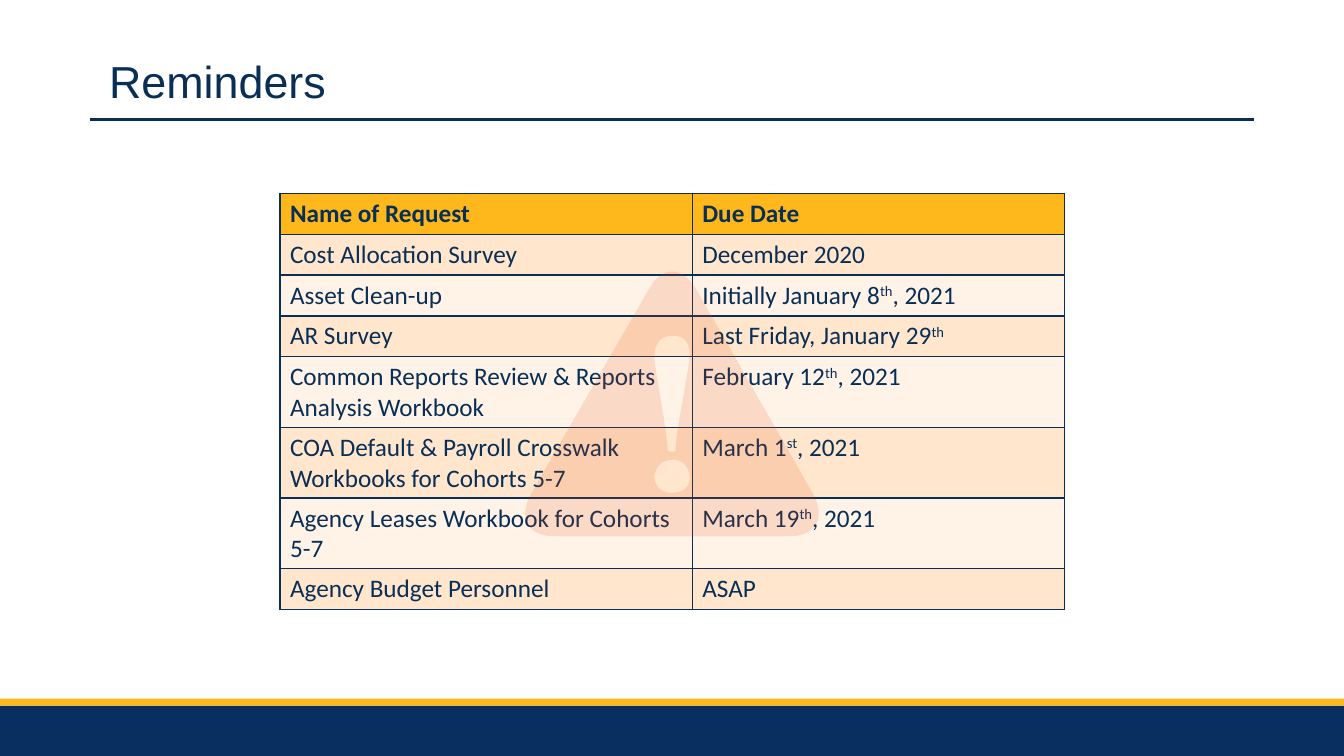
from pptx import Presentation
from pptx.dml.color import RGBColor
from pptx.enum.shapes import MSO_CONNECTOR as Link, MSO_SHAPE as Kind
from pptx.enum.text import MSO_ANCHOR as Anchor
from pptx.oxml import parse_xml
from pptx.oxml.ns import nsdecls, qn
from pptx.util import Inches, Pt
from lxml.etree import SubElement

WIDE, HIGH = Inches(13.33), Inches(7.5)
NAVY = RGBColor(0x09, 0x2F, 0x57)
BASE = RGBColor(0x09, 0x2F, 0x61)
GOLD = RGBColor(0xFF, 0xB8, 0x1C)
PEACH = RGBColor(0xFF, 0xE6, 0xCD)
CREAM = RGBColor(0xFF, 0xF3, 0xE8)
ALERT = RGBColor(0xE1, 0x45, 0x04)

# Text between carets is superscript.
ROWS = [
    ("Name of Request", "Due Date"),
    ("Cost Allocation Survey", "December 2020"),
    ("Asset Clean-up", "Initially January 8^th^, 2021"),
    ("AR Survey", "Last Friday, January 29^th"),
    ("Common Reports Review & Reports Analysis Workbook",
     "February 12^th^, 2021"),
    ("COA Default & Payroll Crosswalk Workbooks for Cohorts 5-7",
     "March 1^st^, 2021"),
    ("Agency Leases Workbook for Cohorts 5-7", "March 19^th^, 2021"),
    ("Agency Budget Personnel", "ASAP"),
]
COLS = (30.68, 27.68)
ROW = 5.41

# Each outline is a start point, then line ends (one point) or
# curves (two controls and an end), on a grid of 305 by 268 units.
GRID = (305, 268)
FRAME = [
    [(293, 227)], [(176, 22)], [(163, 0), (142, 0), (130, 22)],
    [(12, 227)], [(0, 250), (10, 268), (36, 268)],
    [(269, 268)], [(295, 268), (305, 250), (293, 227)],
]
DOT = [
    [(152, 225)], [(143, 225), (135, 219), (135, 209)],
    [(135, 203), (140, 192), (153, 192)],
    [(164, 192), (170, 200), (170, 210)],
    [(170, 219), (164, 225), (152, 225)],
]
MARK = [
    [(156, 182)], [(156, 183), (156, 184), (154, 184)],
    [(150, 184)], [(149, 184), (148, 183), (148, 181)],
    [(147, 158), (135, 101), (135, 91)],
    [(135, 79), (139, 69), (153, 69)],
    [(165, 69), (170, 76), (170, 87)],
    [(170, 101), (157, 159), (156, 182)],
]


def across(share):
    """Percent of the slide's width."""
    return round(WIDE * share / 100)


def down(share):
    """Percent of the slide's height."""
    return round(HIGH * share / 100)


def style(run, size, face, bold=False):
    font = run.font
    font.size, font.name, font.bold = Pt(size), face, bold
    font.color.rgb = NAVY


def add_band(slide, top, tall, color):
    band = slide.shapes.add_shape(Kind.RECTANGLE, 0, down(top), WIDE, down(tall))
    band.shadow.inherit = False
    band.fill.solid()
    band.fill.fore_color.rgb = color
    band.line.fill.background()


def add_rule(slide, left, right, top):
    rule = slide.shapes.add_connector(
        Link.STRAIGHT, across(left), down(top), across(right), down(top))
    rule.line.color.rgb = NAVY
    rule.line.width = Pt(2.25)
    SubElement(rule._element.spPr, qn("a:effectLst"))


def add_title(slide, text):
    box = slide.shapes.add_textbox(
        across(7.38), down(6.4), across(74.42), down(8.53))
    frame = box.text_frame
    frame.word_wrap = True
    frame.vertical_anchor = Anchor.MIDDLE
    frame.text = text
    style(frame.paragraphs[0].runs[0], 32, "Arial")


def add_edges(cell):
    props = cell._tc.get_or_add_tcPr()
    for side in "LRTB":
        props.append(parse_xml(
            f'<a:ln{side} {nsdecls("a")} w="{Pt(1)}"><a:solidFill>'
            f'<a:srgbClr val="{NAVY}"/></a:solidFill></a:ln{side}>'))


def fill_cell(cell, text, color, bold):
    add_edges(cell)
    cell.fill.solid()
    cell.fill.fore_color.rgb = color
    para = cell.text_frame.paragraphs[0]
    for i, part in enumerate(text.split("^")):
        run = para.add_run()
        run.text = part
        style(run, 18, "Calibri", bold)
        if i % 2:
            run._r.get_or_add_rPr().set("baseline", "30000")


def add_grid(slide):
    table = slide.shapes.add_table(
        len(ROWS), len(COLS), across(20.83), down(25.57),
        across(sum(COLS)), down(ROW * len(ROWS))).table
    for col, share in zip(table.columns, COLS):
        col.width = across(share)
    for r, texts in enumerate(ROWS):
        table.rows[r].height = down(ROW)
        color = GOLD if r == 0 else PEACH if r % 2 else CREAM
        for c, text in enumerate(texts):
            fill_cell(table.cell(r, c), text, color, r == 0)


def add_step(route, tag, points):
    step = SubElement(route, qn(tag))
    for x, y in points:
        SubElement(step, qn("a:pt"), x=str(x), y=str(y))


def trace(route, outline):
    """Draw one closed outline with true curves."""
    add_step(route, "a:moveTo", outline[0])
    for points in outline[1:]:
        tag = "a:lnTo" if len(points) == 1 else "a:cubicBezTo"
        add_step(route, tag, points)
    SubElement(route, qn("a:close"))


def add_sign(slide, left, top, width):
    wide, tall = GRID
    pen = slide.shapes.build_freeform(0, 0, across(width) / wide)
    pen.add_line_segments([(wide, 0), (wide, tall)])
    sign = pen.convert_to_shape(across(left), down(top))
    route = next(sign._element.iter(qn("a:path")))
    for step in list(route):
        route.remove(step)
    for outline in (FRAME, DOT, MARK):
        trace(route, outline)
    sign.shadow.inherit = False
    sign.line.fill.background()
    sign.fill.solid()
    sign.fill.fore_color.rgb = ALERT
    tint = sign._element.spPr.find(qn("a:solidFill"))[0]
    SubElement(tint, qn("a:alpha")).set("val", "15000")


def main():
    deck = Presentation()
    deck.slide_width, deck.slide_height = WIDE, HIGH
    slide = deck.slides.add_slide(deck.slide_layouts[6])
    add_band(slide, 93.33, 6.67, BASE)
    add_band(slide, 92.4, 0.93, GOLD)
    add_rule(slide, 6.68, 93.32, 15.77)
    add_title(slide, "Reminders")
    add_grid(slide)
    add_sign(slide, 38.56, 35.2, 22.88)
    deck.save("out.pptx")


if __name__ == "__main__":
    main()
